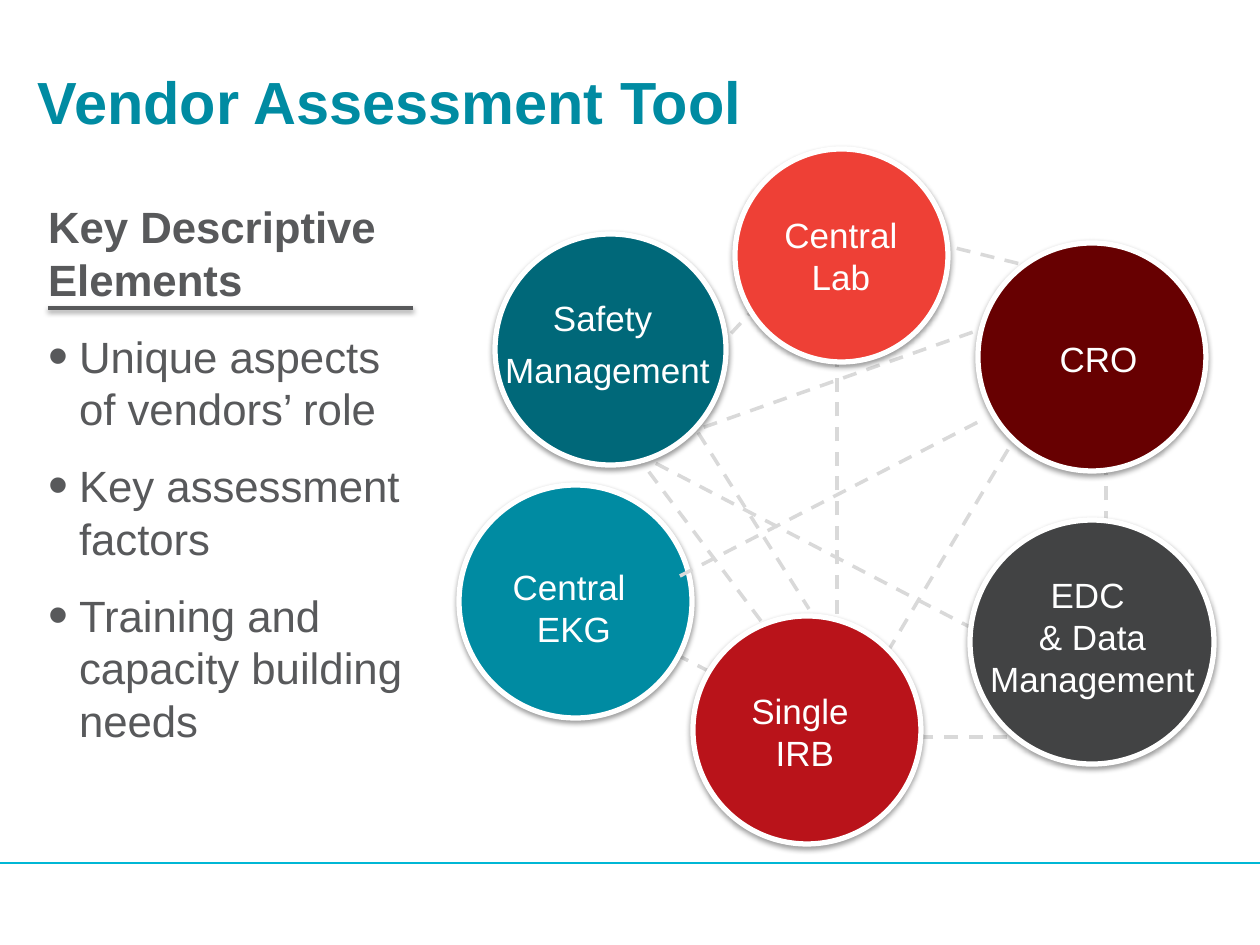
from lxml import etree
from pptx import Presentation
from pptx.dml.color import RGBColor
from pptx.enum.dml import MSO_LINE
from pptx.enum.shapes import MSO_CONNECTOR, MSO_SHAPE
from pptx.enum.text import MSO_ANCHOR, MSO_AUTO_SIZE, PP_ALIGN
from pptx.oxml.ns import qn
from pptx.util import Pt

SCALE = 914400 / 126  # EMU per px
WIDTH, HEIGHT = 1260, 945
FONT = "Arial"

WHITE = RGBColor(0xFF, 0xFF, 0xFF)
TEAL = RGBColor(0x00, 0x8B, 0xA2)
DARK_TEAL = RGBColor(0x00, 0x68, 0x79)
CYAN = RGBColor(0x00, 0xB7, 0xD5)
CHARCOAL = RGBColor(0x42, 0x43, 0x44)
MAROON = RGBColor(0x67, 0x00, 0x01)
CORAL = RGBColor(0xEE, 0x40, 0x36)
CRIMSON = RGBColor(0xB9, 0x13, 0x1A)
TEXT_GREY = RGBColor(0x58, 0x59, 0x5B)
LINK_GREY = RGBColor(0xD9, 0xD9, 0xD9)

# Vendor: circle (left, top, diameter), colour, label box, label lines, space after
VENDORS = [
    ((45, 94, 231), DARK_TEAL, (46, 151, 223, 110), ["Safety ", "Management"], 8),
    ((9, 345, 233), TEAL, (39, 419, 170, 97), ["Central ", "EKG"], 0),
    ((520, 380, 244), CHARCOAL, (538, 423, 209, 147), ["EDC ", "& Data Management"], 0),
    ((528, 103, 228), MAROON, (596, 191, 105, 55), ["CRO"], 0),
    ((285, 9, 213), CORAL, (321, 62, 140, 107), ["Central", "Lab"], 0),
    ((243, 476, 228), CRIMSON, (40, 543, 630, 97), ["Single ", "IRB"], 0),
]

# Points where the links meet, within the diagram
SAFETY, CRO, LAB, IRB = (184, 312), (656, 145), (387, 79), (387, 597)
LINKS_BEHIND = [
    ((116, 458), IRB),
    ((164, 320), LAB),
    (SAFETY, CRO),
    (SAFETY, (387, 582)),
    (SAFETY, (656, 558)),
    ((222, 251), (359, 469)),
    ((656, 597), IRB),
    ((656, 582), CRO),
    (IRB, CRO),
    (IRB, (387, 57)),
    (LAB, CRO),
]
LINK_IN_FRONT = ((230, 436), (532, 280))

ELEMENTS = [
    "Unique aspects of vendors’ role",
    "Key assessment factors",
    "Training and capacity building needs",
]


def px(length):
    return round(length * SCALE)


def place(shape, box):
    shape.left, shape.top, shape.width, shape.height = map(px, box)


def set_effects(shape, shadow):
    """Give a shape a soft shadow below it, or no effect at all."""
    properties = shape._element.spPr
    effects = etree.SubElement(properties, qn("a:effectLst"))
    if shadow:
        outer = etree.SubElement(effects, qn("a:outerShdw"), blurRad=str(Pt(3.1)),
                                 dist=str(Pt(1.6)), dir="5400000", rotWithShape="0")
        colour = etree.SubElement(outer, qn("a:srgbClr"), val="000000")
        etree.SubElement(colour, qn("a:alpha"), val="38000")


def add_line(slide, start, end, colour, weight, dash=None, shadow=False):
    line = slide.shapes.add_connector(MSO_CONNECTOR.STRAIGHT, *map(px, start + end))
    line.line.color.rgb = colour
    line.line.width = Pt(weight)
    if dash:
        line.line.dash_style = dash
    set_effects(line, shadow)


def set_frame(frame, anchor):
    frame.word_wrap = True
    frame.auto_size = MSO_AUTO_SIZE.NONE
    frame.vertical_anchor = anchor
    frame.margin_left = frame.margin_right = 0
    frame.margin_top = frame.margin_bottom = 0


def add_run(paragraph, text, size, colour, bold=False):
    run = paragraph.add_run()
    run.text = text
    run.font.name = FONT
    run.font.size = Pt(size)
    run.font.bold = bold
    run.font.color.rgb = colour


def get_paragraph(frame, index):
    return frame.add_paragraph() if index else frame.paragraphs[0]


def set_bullet(paragraph, indent, char=None):
    properties = paragraph._p.get_or_add_pPr()
    properties.set("marL", str(px(indent)))
    properties.set("indent", str(-px(indent)))
    if char:
        etree.SubElement(properties, qn("a:buSzPct"), val="130000")
        etree.SubElement(properties, qn("a:buFont"), typeface=FONT)
        etree.SubElement(properties, qn("a:buChar"), char=char)
    else:
        etree.SubElement(properties, qn("a:buNone"))


def build_title(slide, box):
    title = slide.shapes.title
    place(title, box)
    set_frame(title.text_frame, MSO_ANCHOR.MIDDLE)
    paragraph = title.text_frame.paragraphs[0]
    paragraph.alignment = PP_ALIGN.LEFT
    add_run(paragraph, "Vendor Assessment Tool", 34, TEAL, bold=True)


def build_key_elements(slide, box):
    left, top, width, _ = box
    body = slide.placeholders[1]
    place(body, box)
    frame = body.text_frame
    set_frame(frame, MSO_ANCHOR.TOP)
    for index, text in enumerate(["Key Descriptive Elements"] + ELEMENTS):
        paragraph = get_paragraph(frame, index)
        is_heading = index == 0
        set_bullet(paragraph, 0 if is_heading else 31, None if is_heading else "•")
        paragraph.line_spacing = 1.0
        paragraph.space_before = Pt(0 if is_heading else 14)
        add_run(paragraph, text, 25, TEXT_GREY, bold=is_heading)
    # Rule under the heading
    rule = top + 108
    add_line(slide, (left, rule), (left + width, rule), TEXT_GREY, 2, shadow=True)


def build_vendor_network(slide, box):
    x, y = box[:2]

    def add_link(start, end):
        add_line(slide, (x + start[0], y + start[1]), (x + end[0], y + end[1]),
                 LINK_GREY, 2, MSO_LINE.DASH)

    for link in LINKS_BEHIND:
        add_link(*link)

    for (left, top, diameter), colour, label_box, lines, gap in VENDORS:
        # Circle
        circle = slide.shapes.add_shape(MSO_SHAPE.OVAL, 0, 0, 0, 0)
        place(circle, (x + left, y + top, diameter, diameter))
        circle.fill.solid()
        circle.fill.fore_color.rgb = colour
        circle.line.color.rgb = WHITE
        circle.line.width = Pt(3)
        set_effects(circle, shadow=True)
        # Label
        label_left, label_top, *label_size = label_box
        label = slide.shapes.add_textbox(0, 0, 0, 0)
        place(label, (x + label_left, y + label_top, *label_size))
        set_frame(label.text_frame, MSO_ANCHOR.MIDDLE)
        for index, text in enumerate(lines):
            paragraph = get_paragraph(label.text_frame, index)
            paragraph.alignment = PP_ALIGN.CENTER
            if gap:
                paragraph.line_spacing = 0.9
                paragraph.space_after = Pt(gap)
            add_run(paragraph, text, 20, WHITE)

    add_link(*LINK_IN_FRONT)


def main():
    deck = Presentation()
    deck.slide_width, deck.slide_height = px(WIDTH), px(HEIGHT)
    slide = deck.slides.add_slide(deck.slide_layouts[1])
    # Footer line
    add_line(slide, (0, 863), (WIDTH, 863), CYAN, 0.75)
    build_title(slide, (38, 48, 1166, 106))
    build_vendor_network(slide, (450, 140, 770, 710))
    build_key_elements(slide, (48, 200, 365, 602))
    deck.save("out.pptx")


if __name__ == "__main__":
    main()
